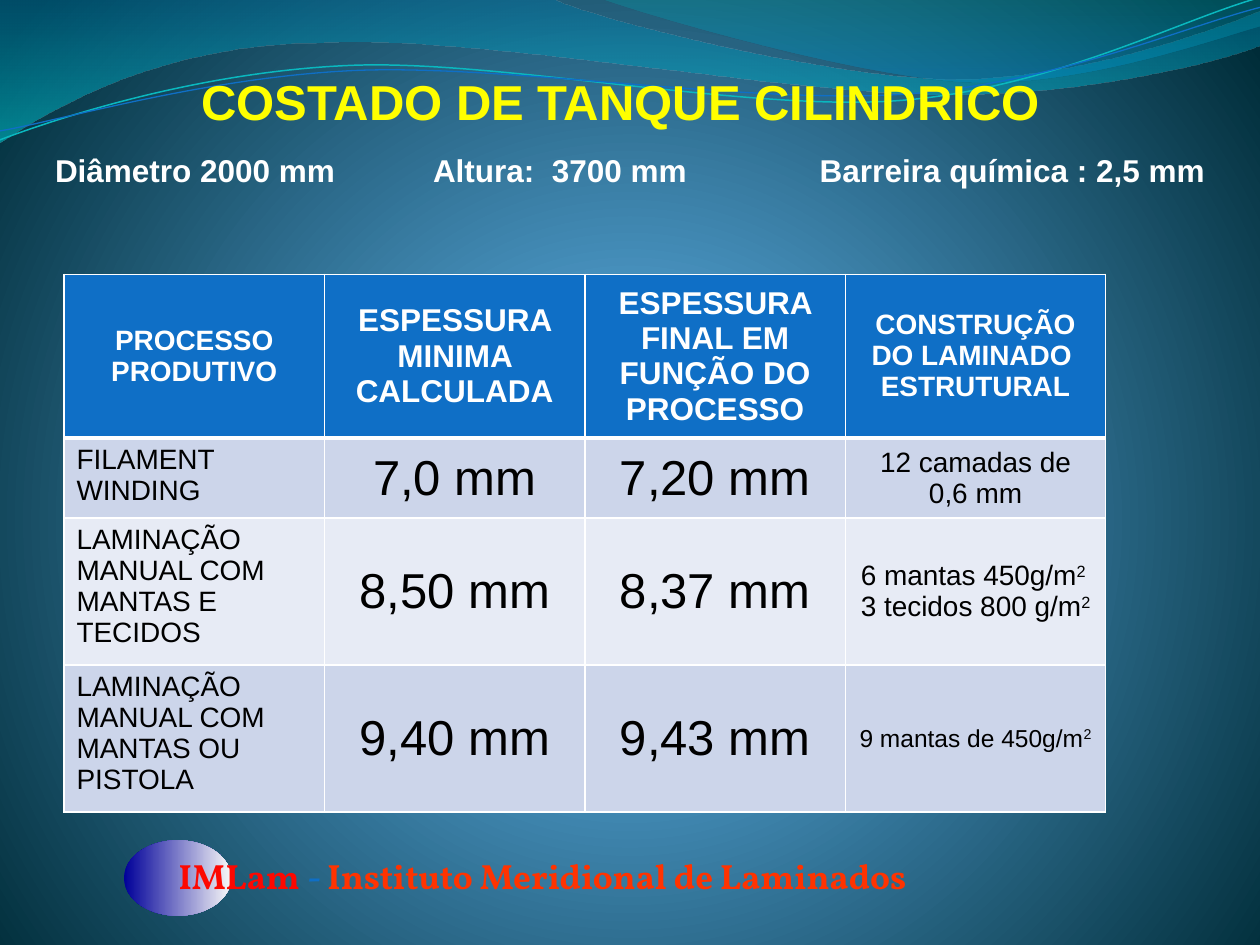
"""Build a slide on the wall thickness of a cylindrical tank by process."""
from dataclasses import dataclass
from typing import Optional

from lxml import etree
from pptx import Presentation
from pptx.dml.color import RGBColor
from pptx.enum.shapes import MSO_SHAPE
from pptx.enum.text import MSO_ANCHOR, PP_ALIGN
from pptx.oxml import parse_xml
from pptx.oxml.ns import nsdecls, qn
from pptx.util import Cm, Pt

COLORS = {
    "title": "FFFF00", "white": "FFFFFF", "text": "000000", "header": "0F6FC6",
    "odd": "CCD5EA", "even": "E7EBF5", "acronym": "FD0801", "name": "FF3300",
    "teal_line": "0AB8BF", "bg_mid": "4C98C7", "bg_in": "4AA0D6", "bg_out": "002C38",
    "wave_a": "0074A1", "wave_b": "00C6CF", "crest_a": "00A1A9", "crest_b": "008BBF",
    "badge_a": "000099", "badge_b": "F8F8F8",
}
Point = tuple[float, float]
Stop = tuple[int, str, int]
LINEAR = '<a:lin ang="{}" scaled="0"/>'
DOWN, ACROSS = LINEAR.format(5400000), LINEAR.format(0)
RADIAL = ('<a:path path="circle"><a:fillToRect l="10000" t="110000" '
          'r="10000" b="100000"/></a:path>')


@dataclass
class Wave:
    """A chain of cubic curves and straight lines, filled or drawn as a line."""
    start: Point
    curves: list[tuple[Point, ...]]
    stops: Optional[list[Stop]] = None
    line: Optional[str] = None
    width: float = 0


@dataclass
class Column:
    """The heading and the text sizes of a table column."""
    heading: str
    heading_size: int
    size: int
    centred: bool = True


WAVES = [
    Wave((0, 0), [
        ((11.18, 0),),
        ((12.09, 0.43), (16.87, 1.6), (19.25, 1.6)),
        ((21.67, 1.6), (24.33, 0.66), (25.4, 0.23)),
        ((25.4, 0.91),),
        ((24.97, 1.12), (22.1, 1.93), (18.95, 1.9)),
        ((15.8, 1.9), (9.7, 0.71), (6.53, 0.86)),
        ((3.28, 0.89), (1.17, 2.11), (0, 2.87)),
    ], stops=[(0, "wave_a", 45), (100, "wave_b", 55)]),
    Wave((12.17, 0), [
        ((12.93, 0.28), (17.32, 1.57), (19.53, 1.65)),
        ((21.74, 1.75), (24.41, 0.81), (25.4, 0.53)),
        ((25.4, 0),),
    ], stops=[(0, "crest_a", 30), (80, "crest_b", 45)]),
    Wave((0, 2.82), [
        ((1.22, 2.36), (4.01, 1.45), (7.04, 1.32)),
        ((10.03, 1.19), (15.06, 2.26), (18.11, 2.03)),
        ((21.16, 1.8), (23.83, 0.38), (25.4, -0.05)),
    ], line="teal_line", width=0.85),
    Wave((0, 2.64), [
        ((1.19, 2.44), (4.17, 1.55), (7.19, 1.42)),
        ((10.24, 1.3), (15.16, 2.11), (18.21, 1.9)),
        ((21.23, 1.7), (23.9, 0.53), (25.4, 0.15)),
    ], line="header", width=0.75),
]
COLUMNS = [
    Column("PROCESSO PRODUTIVO", 16, 16, centred=False),
    Column("ESPESSURA MINIMA CALCULADA", 18, 28),
    Column("ESPESSURA FINAL EM FUNÇÃO DO PROCESSO", 18, 28),
    Column("CONSTRUÇÃO DO LAMINADO  ESTRUTURAL", 16, 16),
]
ROWS = [
    ("FILAMENT WINDING", "7,0 mm", "7,20 mm", "12 camadas de 0,6 mm"),
    ("LAMINAÇÃO MANUAL COM MANTAS E TECIDOS", "8,50 mm", "8,37 mm",
     "6 mantas 450g/m^2 \n3 tecidos 800 g/m^2"),
    ("LAMINAÇÃO MANUAL COM MANTAS OU PISTOLA", "9,40 mm", "9,43 mm",
     "9 mantas de 450g/m^2"),
]
ROW_HEIGHTS = [3.29, 1.61, 2.96, 2.96]
COLUMN_WIDTH = 5.25


def rgb(name: str) -> RGBColor:
    """Look up a colour."""
    return RGBColor.from_string(COLORS[name])


def gradient(stops: list[Stop], direction: str):
    """Make a gradient fill from (position, colour, opacity) stops."""
    gs = "".join(f'<a:gs pos="{pos * 1000}"><a:srgbClr val="{COLORS[c]}">'
                 f'<a:alpha val="{alpha * 1000}"/></a:srgbClr></a:gs>'
                 for pos, c, alpha in stops)
    return parse_xml(f'<a:gradFill {nsdecls("a")} rotWithShape="1">'
                     f'<a:gsLst>{gs}</a:gsLst>{direction}</a:gradFill>')


def fill_gradient(parent, stops: list[Stop], direction: str) -> None:
    """Swap the solid fill below parent for a gradient."""
    parent.replace(parent.find(qn("a:solidFill")), gradient(stops, direction))


def bend(sp, curves: list[tuple[Point, ...]]) -> None:
    """Join each three line segments of a cubic curve into one."""
    segments = iter(list(sp.element.iter(qn("a:lnTo"))))
    for curve in curves:
        group = [next(segments) for _ in curve]
        if len(group) == 3:
            cubic = etree.Element(qn("a:cubicBezTo"))
            group[0].addprevious(cubic)
            for segment in group:
                cubic.append(segment[0])
                segment.getparent().remove(segment)


def add_wave(s, wave: Wave) -> None:
    """Draw a wave."""
    fb = s.shapes.build_freeform(*map(Cm, wave.start))
    fb.add_line_segments([(Cm(x), Cm(y)) for curve in wave.curves for x, y in curve],
                         close=wave.stops is not None)
    sp = fb.convert_to_shape()
    bend(sp, wave.curves)
    sp.shadow.inherit = False
    if wave.stops:
        sp.fill.solid()
        fill_gradient(sp.element.spPr, wave.stops, DOWN)
        sp.line.fill.background()
    else:
        sp.fill.background()
        sp.line.color.rgb = rgb(wave.line)
        sp.line.width = Pt(wave.width)


def set_font(p, size: int, color: str, bold: bool, name: str = "Arial") -> None:
    """Set the font of a paragraph."""
    p.font.name, p.font.size, p.font.bold = name, Pt(size), bold
    p.font.color.rgb = rgb(color)


def add_text(s, box: tuple[float, ...], size: int, name: str,
             runs: list[tuple[str, str]], align: PP_ALIGN) -> None:
    """Add a bold line made of (text, colour) runs."""
    tf = s.shapes.add_textbox(*map(Cm, box)).text_frame
    tf.word_wrap = True
    p = tf.paragraphs[0]
    p.alignment = align
    set_font(p, size, runs[0][1], True, name)
    p._p.get_or_add_pPr().set("defTabSz", str(Cm(2.54)))
    for text, color in runs:
        r = p.add_run()
        r.text = text
        r.font.color.rgb = rgb(color)


def fill_cell(cell, text: str, size: int, color: str, fill: str,
              bold: bool, centred: bool) -> None:
    """Write and style a cell; a caret raises the text after it."""
    cell.fill.solid()
    cell.fill.fore_color.rgb = rgb(fill)
    cell.vertical_anchor = MSO_ANCHOR.MIDDLE if centred else MSO_ANCHOR.TOP
    tf = cell.text_frame
    for i, line in enumerate(text.split("\n")):
        p = tf.add_paragraph() if i else tf.paragraphs[0]
        p.alignment = PP_ALIGN.CENTER if centred else PP_ALIGN.LEFT
        set_font(p, size, color, bold)
        for j, part in enumerate(line.split("^")):
            r = p.add_run()
            r.text = part
            if j:
                r.font._element.set("baseline", "30000")
    tcPr = cell._tc.get_or_add_tcPr()
    for i, side in enumerate("LRTB"):
        width = Pt(3 if bold and side == "B" else 1)
        ln = etree.Element(qn(f"a:ln{side}"), w=str(width))
        solid = etree.SubElement(ln, qn("a:solidFill"))
        etree.SubElement(solid, qn("a:srgbClr"), val=COLORS["white"])
        tcPr.insert(i, ln)


def add_process_table(s) -> None:
    """Add the table of thicknesses by process."""
    table = s.shapes.add_table(
        len(ROWS) + 1, len(COLUMNS), Cm(1.29), Cm(5.53),
        Cm(COLUMN_WIDTH * len(COLUMNS)), Cm(sum(ROW_HEIGHTS))).table
    for row, height in zip(table.rows, ROW_HEIGHTS):
        row.height = Cm(height)
    for j, col in enumerate(COLUMNS):
        table.columns[j].width = Cm(COLUMN_WIDTH)
        fill_cell(table.cell(0, j), col.heading, col.heading_size,
                  "white", "header", True, True)
        for i, row in enumerate(ROWS, 1):
            size = 14 if row[j].startswith("9 mantas") else col.size
            fill_cell(table.cell(i, j), row[j], size, "text",
                      "odd" if i % 2 else "even", False, col.centred)


def main() -> None:
    """Build and save the slide."""
    prs = Presentation()
    prs.slide_width, prs.slide_height = Cm(25.4), Cm(19.05)
    s = prs.slides.add_slide(prs.slide_layouts[6])
    s.background.fill.solid()
    fill_gradient(s.element.find(".//" + qn("p:bgPr")),
                  [(0, "bg_in", 100), (25, "bg_mid", 100), (100, "bg_out", 100)], RADIAL)
    for wave in WAVES:
        add_wave(s, wave)
    badge = s.shapes.add_shape(MSO_SHAPE.OVAL, Cm(2.5), Cm(16.94), Cm(2.16), Cm(1.52))
    badge.shadow.inherit = False
    badge.fill.solid()
    fill_gradient(badge.element.spPr, [(0, "badge_a", 100), (100, "badge_b", 100)], ACROSS)
    badge.line.fill.background()
    add_text(s, (3.35, 17.11, 16.71, 1.09), 20, "Vollkorn",
             [("IMLam ", "acronym"), ("- ", "header"),
              ("Instituto Meridional de Laminados", "name")], PP_ALIGN.LEFT)
    add_text(s, (0.51, 1.32, 24, 1.45), 28, "Arial",
             [("COSTADO DE TANQUE CILINDRICO", "title")], PP_ALIGN.CENTER)
    add_text(s, (0, 2.92, 25.4, 1.8), 18, "Arial",
             [("Diâmetro 2000 mm\tAltura:  3700 mm\t Barreira química : 2,5 mm", "white")],
             PP_ALIGN.CENTER)
    add_process_table(s)
    prs.save("out.pptx")


if __name__ == "__main__":
    main()
